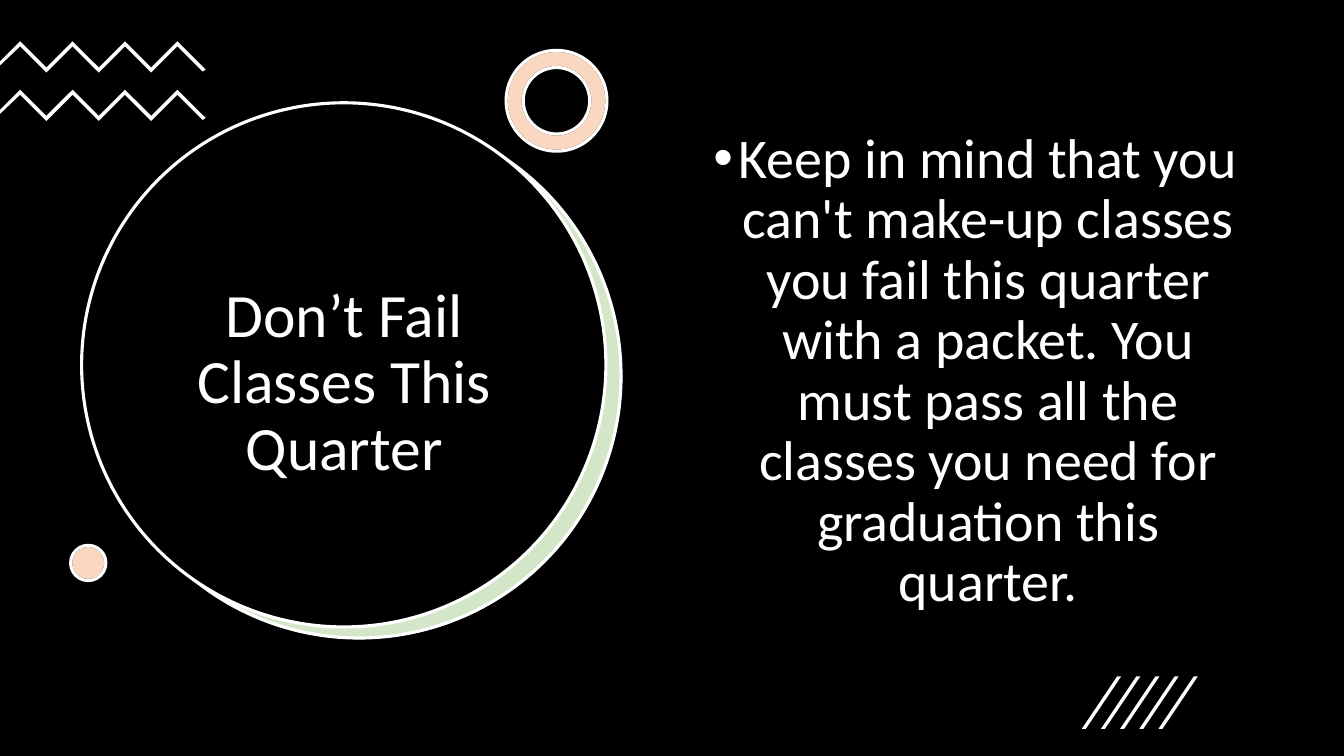
from pptx import Presentation
from pptx import util as u
from pptx.dml.color import RGBColor
from pptx.enum import shapes, text
from pptx.oxml.ns import qn
from lxml import etree

COLORS = {"black": "000000", "white": "FFFFFF", "green": "70AD47", "orange": "ED7D31"}
KINDS = shapes.MSO_SHAPE


class SlideArtist:
    font = "Calibri"
    line_width = u.Pt(2.25)

    def __init__(self, slide):
        self.slide = slide

    def color(self, name):
        return RGBColor.from_string(COLORS[name])

    def paint(self, shape, fill, line=None, alpha=None):
        shape.shadow.inherit = False
        shape.fill.solid()
        shape.fill.fore_color.rgb = self.color(fill)
        if alpha:
            rgb = shape._element.spPr.find(qn("a:solidFill")).find(qn("a:srgbClr"))
            etree.SubElement(rgb, qn("a:alpha"), val=str(alpha * 1000))
        if line:
            shape.line.color.rgb = self.color(line)
            shape.line.width = self.line_width
        else:
            shape.line.fill.background()

    def preset(self, kind, left, top, width, height, fill, line=None, alpha=None):
        shape = self.slide.shapes.add_shape(
            kind, u.Inches(left), u.Inches(top), u.Inches(width), u.Inches(height))
        self.paint(shape, fill, line, alpha)
        return shape

    def outlines(self, polygons):
        group = self.slide.shapes.add_group_shape()
        for polygon in polygons:
            points = [(u.Inches(x), u.Inches(y)) for x, y in polygon]
            builder = group.shapes.build_freeform(*points[0])
            builder.add_line_segments(points[1:], close=True)
            self.paint(builder.convert_to_shape(), "white")

    def fill_text(self, frame, words, size, bullet=None):
        frame.word_wrap = True
        frame.auto_size = text.MSO_AUTO_SIZE.NONE
        paragraph = frame.paragraphs[0]
        paragraph.text = words
        paragraph.alignment = text.PP_ALIGN.CENTER
        paragraph.line_spacing = 0.9
        if bullet:
            props = paragraph._p.get_or_add_pPr()
            props.set("marL", str(u.Inches(0.25)))
            props.set("indent", str(u.Inches(-0.25)))
            etree.SubElement(props, qn("a:buFont"), typeface="Arial")
            etree.SubElement(props, qn("a:buChar"), char=bullet)
        paragraph.font.name = self.font
        paragraph.font.size = u.Pt(size)
        paragraph.font.color.rgb = self.color("white")

    def title(self, words, left, top, width, height, size):
        heading = self.slide.shapes.title
        heading.left, heading.top = u.Inches(left), u.Inches(top)
        heading.width, heading.height = u.Inches(width), u.Inches(height)
        self.slide.shapes._spTree.append(heading._element)
        heading.text_frame.vertical_anchor = text.MSO_ANCHOR.MIDDLE
        self.fill_text(heading.text_frame, words, size)

    def bullet(self, words, left, top, width, height, size):
        box = self.slide.shapes.add_textbox(
            u.Inches(left), u.Inches(top), u.Inches(width), u.Inches(height))
        self.fill_text(box.text_frame, words, size, "•")


def zigzag(top):
    step, thickness = 0.26, 0.05
    ridge = [(0.2 + step * i, top + step * (i % 2)) for i in range(7)]
    underside = [(x, y + thickness) for x, y in reversed(ridge)]
    right_end = [(2.04, top + 0.28), (2.01, top + 0.3)]
    left_end = [(0, top + 0.24), (0, top + 0.2)]
    return ridge + right_end + underside + left_end


def slash(left):
    top, bottom, thickness, lean = 6.71, 7.23, 0.04, 0.35
    return [(left + thickness, bottom), (left, bottom),
            (left + lean, top), (left + lean + thickness, top)]


def main():
    deck = Presentation()
    deck.slide_width, deck.slide_height = u.Inches(13.33), u.Inches(7.5)
    artist = SlideArtist(deck.slides.add_slide(deck.slide_layouts[5]))

    artist.preset(KINDS.RECTANGLE, 0, 0, 13.33, 7.5, "black")
    artist.preset(KINDS.OVAL, 0.97, 1.14, 5.2, 5.2, "white")
    artist.preset(KINDS.OVAL, 0.96, 1.13, 5.2, 5.2, "green", "white", 30)
    artist.preset(KINDS.OVAL, 0.81, 1.02, 5.2, 5.2, "black", "white")
    artist.title("Don’t Fail Classes This Quarter", 1.21, 2.05, 4.41, 3.52, 44)

    artist.outlines([zigzag(top) for top in (0.41, 0.89)])
    layers = (("white", "black", None), ("orange", "white", 30))
    for layer in layers:
        ring = artist.preset(KINDS.DONUT, 5.02, 0.5, 1, 1, *layer)
        ring.adjustments[0] = 0.17
    for layer in layers:
        artist.preset(KINDS.OVAL, 0.7, 5.41, 0.35, 0.35, *layer)

    artist.bullet(
        "Keep in mind that you can't make-up classes you fail this quarter with a packet. "
        "You must pass all the classes you need for graduation this quarter.",
        6.82, 1.24, 5.71, 4.76, 40)
    artist.outlines([slash(10.73 + 0.19 * i) for i in range(5)])

    deck.save("out.pptx")


if __name__ == "__main__":
    main()
